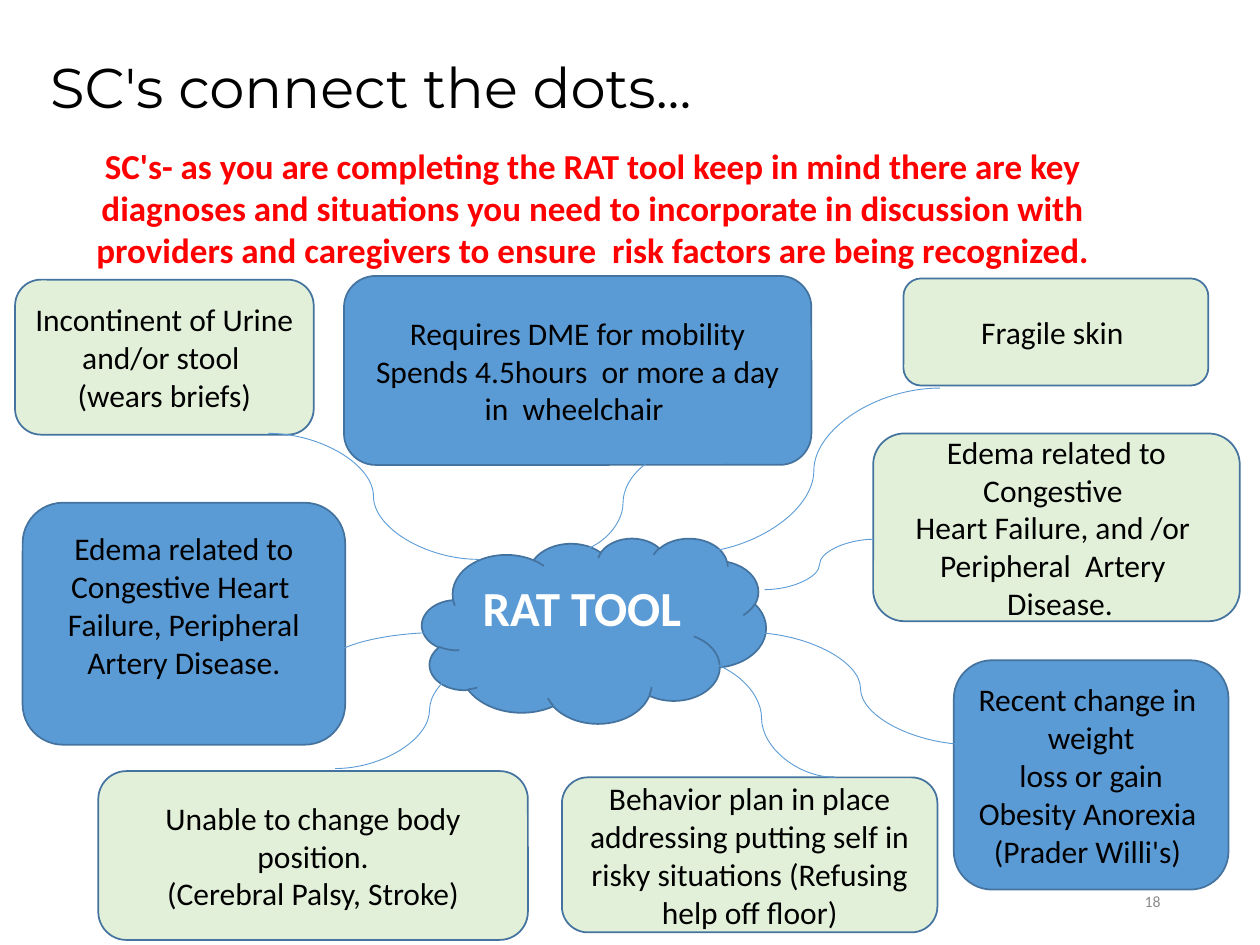
from dataclasses import dataclass

from lxml import etree
from pptx import Presentation
from pptx import util as u
from pptx.dml.color import RGBColor
from pptx.enum import shapes, text
from pptx.oxml.ns import qn


@dataclass(frozen=True)
class Theme:
    blue: str = "5B9BD5"
    green: str = "E2F0D9"
    outline: str = "43739E"
    red: str = "FF0000"
    black: str = "000000"
    white: str = "FFFFFF"
    grey: str = "8C8C8C"
    body_font: str = "Calibri"
    title_font: str = "Montserrat"
    title_size: int = 32
    hub_size: int = 28
    lead_size: int = 20
    body_size: int = 18
    number_size: int = 9
    outline_width: float = 1
    link_width: float = 0.5


@dataclass(frozen=True)
class Area:
    left: float
    top: float
    width: float
    height: float

    def lengths(self) -> list[u.Length]:
        return [u.Inches(v) for v in (self.left, self.top, self.width, self.height)]


@dataclass(frozen=True)
class Bubble:
    area: Area
    fill: str
    lines: tuple[str, ...]
    bottom_inset: float = 0.05


@dataclass(frozen=True)
class Link:
    start: tuple[float, float]
    end: tuple[float, float]


THEME = Theme()
ALIGN = text.PP_ALIGN
ANCHOR = text.MSO_ANCHOR
RAISED = 0.35  # bottom inset that lifts text above the middle

CLOUD = Bubble(Area(3.35, 4.27, 2.73, 1.47), THEME.blue, ("RAT TOOL",), RAISED)

BUBBLES = (
    Bubble(Area(0.12, 2.22, 2.37, 1.23), THEME.green,
           ("Incontinent of Urine and/or stool ", "(wears briefs)")),
    Bubble(Area(2.73, 2.19, 3.71, 1.5), THEME.blue,
           ("Requires DME for mobility",
            "Spends 4.5hours  or more a day in  wheelchair ")),
    Bubble(Area(7.17, 2.21, 2.42, 0.85), THEME.green, ("Fragile skin ",)),
    Bubble(Area(6.93, 3.44, 2.91, 1.49), THEME.green,
           ("Edema related to Congestive ",
            "Heart Failure, and /or  Peripheral  Artery ", " Disease.")),
    Bubble(Area(7.57, 5.24, 2.18, 1.82), THEME.blue,
           ("Recent change in  weight", "loss or gain",
            "Obesity Anorexia  ", "(Prader Willi's) ")),
    Bubble(Area(4.46, 6.17, 2.98, 1.23), THEME.green,
           ("Behavior plan in place addressing putting self in risky "
            "situations (Refusing help off floor)",)),
    Bubble(Area(0.78, 6.12, 3.41, 1.34), THEME.green,
           ("Unable to change body position.", "(Cerebral Palsy, Stroke)")),
    Bubble(Area(0.18, 3.99, 2.56, 1.92), THEME.blue,
           ("Edema related to Congestive Heart  Failure, "
            "Peripheral Artery Disease.",), RAISED),
)

LINKS = (
    Link((5.95, 5.02), (7.71, 5.91)),
    Link((7.46, 3.08), (5.46, 4.39)),
    Link((6.94, 4.28), (6.07, 4.68)),
    Link((6.63, 6.17), (5.46, 5.23)),
    Link((3.48, 5.02), (1.76, 5.47)),
    Link((4.16, 5.17), (2.66, 6.1)),
    Link((3.8, 4.44), (2.13, 3.44)),
    Link((5.39, 3.59), (4.5, 4.39)),
)


def write(frame, lines: tuple[str, ...], color: str, align=ALIGN.CENTER,
          **font_format) -> None:
    """Fill a text frame with one paragraph per line."""
    frame.word_wrap = True
    for index, line in enumerate(lines):
        para = frame.paragraphs[0] if index == 0 else frame.add_paragraph()
        para.alignment = align
        span = para.add_run()
        span.text = line
        span.font.color.rgb = RGBColor.from_string(color)
        for name, value in font_format.items():
            setattr(span.font, name, value)


def add_label(page, area: Area, line: str, color: str, align, grow: bool = True,
              **font_format) -> None:
    frame = page.shapes.add_textbox(*area.lengths()).text_frame
    write(frame, (line,), color, align, **font_format)
    if grow:
        frame.auto_size = text.MSO_AUTO_SIZE.SHAPE_TO_FIT_TEXT
    else:
        frame.vertical_anchor = ANCHOR.MIDDLE


def add_bubble(page, bubble: Bubble, preset, color: str, **font_format) -> None:
    box = page.shapes.add_shape(preset, *bubble.area.lengths())
    box.shadow.inherit = False
    box.fill.solid()
    box.fill.fore_color.rgb = RGBColor.from_string(bubble.fill)
    box.line.color.rgb = RGBColor.from_string(THEME.outline)
    box.line.width = u.Pt(THEME.outline_width)
    frame = box.text_frame
    frame.vertical_anchor = ANCHOR.MIDDLE
    frame.margin_bottom = u.Inches(bubble.bottom_inset)
    write(frame, bubble.lines, color, name=THEME.body_font, **font_format)


def add_link(page, link: Link) -> None:
    ends = [u.Inches(v) for v in link.start + link.end]
    curve = page.shapes.add_connector(shapes.MSO_CONNECTOR.CURVE, *ends)
    curve.line.color.rgb = RGBColor.from_string(THEME.blue)
    curve.line.width = u.Pt(THEME.link_width)
    etree.SubElement(curve._element.spPr, qn("a:effectLst"))


def main() -> None:
    deck = Presentation()
    deck.slide_width, deck.slide_height = u.Inches(10), u.Inches(7.5)
    page = deck.slides.add_slide(deck.slide_layouts[6])

    # Slide number, lead text and title
    add_label(page, Area(7.06, 6.95, 2.25, 0.4), "18", THEME.grey, ALIGN.RIGHT,
              grow=False, name=THEME.body_font, size=u.Pt(THEME.number_size))
    add_label(page, Area(0.24, 1.1, 8.93, 1.11),
              "SC's- as you are completing the RAT tool keep in mind there are key "
              "diagnoses and situations you need to incorporate in discussion with "
              "providers and caregivers to ensure  risk factors are being recognized.",
              THEME.red, ALIGN.CENTER, name=THEME.body_font,
              size=u.Pt(THEME.lead_size), bold=True)
    add_label(page, Area(0.3, 0.37, 9.45, 0.94), "SC's connect the dots...",
              THEME.black, ALIGN.LEFT, name=THEME.title_font,
              size=u.Pt(THEME.title_size))

    # Central cloud and the risk factors around it
    add_bubble(page, CLOUD, shapes.MSO_SHAPE.CLOUD, THEME.white,
               size=u.Pt(THEME.hub_size), bold=True)
    for bubble in BUBBLES:
        add_bubble(page, bubble, shapes.MSO_SHAPE.ROUNDED_RECTANGLE, THEME.black,
                   size=u.Pt(THEME.body_size))

    # Curves from the cloud to each risk factor
    for link in LINKS:
        add_link(page, link)

    deck.save("out.pptx")


if __name__ == "__main__":
    main()
